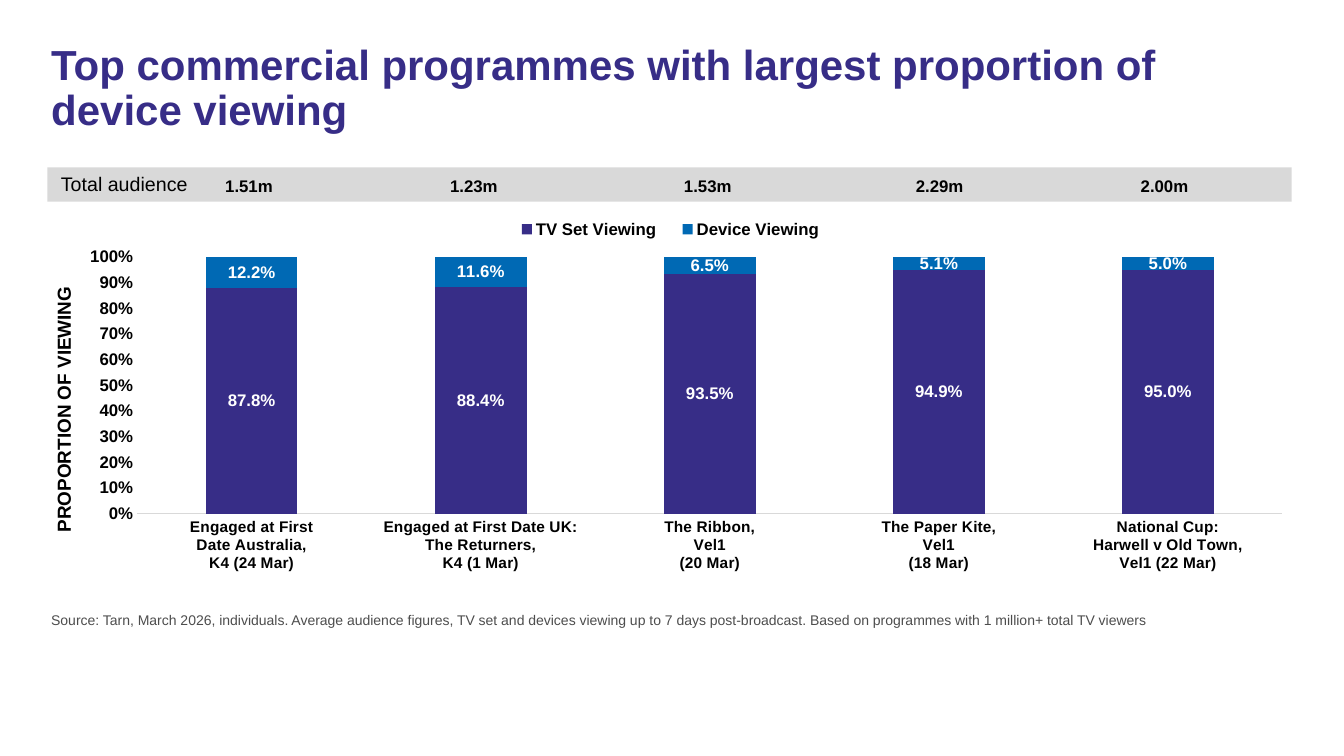
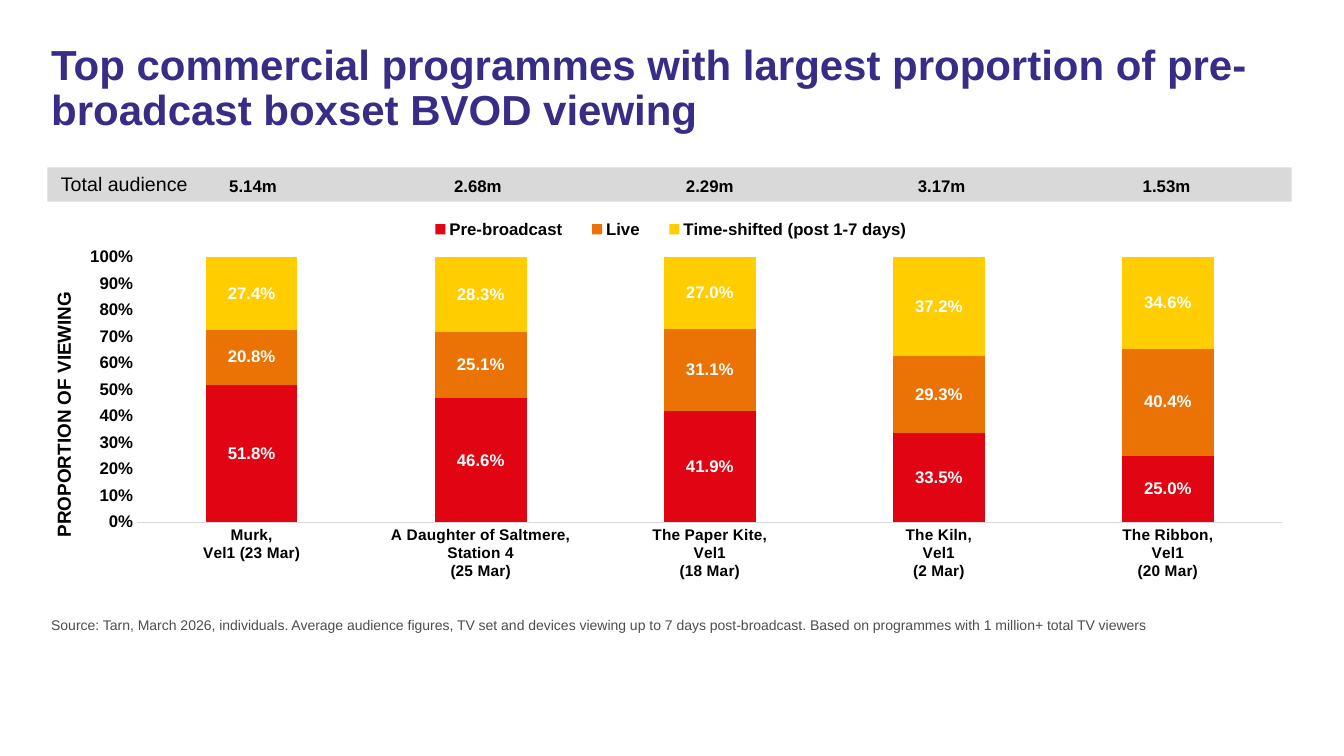
"""Build two slides on how the top commercial programmes are viewed."""
import pptx
import pptx.chart.data
import pptx.dml.color
import pptx.enum.chart
import pptx.enum.shapes
import pptx.enum.text
import pptx.oxml
import pptx.oxml.ns
import pptx.util

Inches = pptx.util.Inches
Pt = pptx.util.Pt
qn = pptx.oxml.ns.qn
ALIGN = pptx.enum.text.PP_ALIGN

FONT = "Arial"
COLOURS = {
    "purple": "372D87",
    "blue": "0069B4",
    "red": "E10514",
    "orange": "EB7305",
    "yellow": "FFCD00",
    "band": "D9D9D9",
    "source": "4D4D4D",
    "black": "000000",
    "white": "FFFFFF",
}
CHART_WIDTH, CHART_HEIGHT = 12.4, 4.8
SOURCE = (
    "Source: Tarn, March 2026, individuals. Average audience figures, TV set and "
    "devices viewing up to 7 days post-broadcast. Based on programmes with "
    "1 million+ total TV viewers"
)

DEVICE_SLIDE = {
    "title": "Top commercial programmes with largest proportion of device viewing",
    "audiences": [("1.51m", 2.47), ("1.23m", 4.7), ("1.53m", 7.02),
                  ("2.29m", 9.32), ("2.00m", 11.55)],
    "programmes": [
        "Engaged at First\nDate Australia,\nK4 (24 Mar)",
        "Engaged at First Date UK:\nThe Returners,\nK4 (1 Mar)",
        "The Ribbon,\nVel1\n(20 Mar)",
        "The Paper Kite,\nVel1\n(18 Mar)",
        "National Cup:\nHarwell v Old Town,\nVel1 (22 Mar)",
    ],
    "viewing": [
        ("TV Set Viewing", "purple", [0.878, 0.884, 0.935, 0.949, 0.95]),
        ("Device Viewing", "blue", [0.122, 0.116, 0.065, 0.051, 0.05]),
    ],
    "plot_height": 2.55,
    "axis_title_top": 1.45,
    "legend_left": 4.5,
    "legend_width": 3.36,
    "source_top": 6.02,
}
BOXSET_SLIDE = {
    "title": "Top commercial programmes with largest proportion of "
             "pre-broadcast boxset BVOD viewing",
    "audiences": [("5.14m", 2.51), ("2.68m", 4.74), ("2.29m", 7.04),
                  ("3.17m", 9.34), ("1.53m", 11.57)],
    "programmes": [
        "Murk,\nVel1 (23 Mar)",
        "A Daughter of Saltmere,\nStation 4\n(25 Mar)",
        "The Paper Kite,\nVel1\n(18 Mar)",
        "The Kiln,\nVel1\n(2 Mar)",
        "The Ribbon,\nVel1\n(20 Mar)",
    ],
    "viewing": [
        ("Pre-broadcast", "red", [0.518, 0.466, 0.419, 0.335, 0.25]),
        ("Live", "orange", [0.208, 0.251, 0.311, 0.293, 0.404]),
        ("Time-shifted (post 1-7 days)", "yellow",
         [0.274, 0.283, 0.27, 0.372, 0.346]),
    ],
    "plot_height": 2.63,
    "axis_title_top": 1.5,
    "legend_left": 3.61,
    "legend_width": 5.15,
    "source_top": 6.07,
}


def rgb(name):
    """Return the named colour."""
    return pptx.dml.color.RGBColor.from_string(COLOURS[name])


def style_font(font, size, colour="black", bold=False):
    """Apply the shared typeface with a size, colour and weight."""
    font.name = FONT
    font.size = Pt(size)
    font.bold = bold
    font.color.rgb = rgb(colour)


def add_text(slide, text, left, top, width, height, size, colour="black",
             bold=False, align=ALIGN.LEFT, spacing=None):
    """Add a wrapped one-paragraph text box."""
    box = slide.shapes.add_textbox(
        Inches(left), Inches(top), Inches(width), Inches(height))
    box.text_frame.word_wrap = True
    paragraph = box.text_frame.paragraphs[0]
    paragraph.text = text
    paragraph.alignment = align
    paragraph.line_spacing = spacing
    style_font(paragraph.font, size, colour, bold)


def add_audience_band(slide):
    """Add the grey band behind the audience totals."""
    band = slide.shapes.add_shape(
        pptx.enum.shapes.MSO_SHAPE.RECTANGLE,
        Inches(0.47), Inches(1.66), Inches(12.34), Inches(0.34))
    band.shadow.inherit = False
    band.fill.solid()
    band.fill.fore_color.rgb = rgb("band")
    band.line.fill.background()


def add_audiences(slide, audiences):
    """Label the band and centre each total above its column."""
    for total, centre in audiences:
        add_text(slide, total, centre - 0.5, 1.69, 1, 0.3, 12,
                 bold=True, align=ALIGN.CENTER)
    add_text(slide, "Total audience", 0.16, 1.66, 1.8, 0.34, 14,
             align=ALIGN.RIGHT)


def place_in_chart(part, left, top, width=None, height=None, inner=False):
    """Fix a chart part at a place given in inches from the chart corner."""
    for old in part.findall(qn("c:layout")):
        part.remove(old)
    settings = [("layoutTarget", "inner")] if inner else []
    settings += [("xMode", "edge"), ("yMode", "edge"),
                 ("x", left / CHART_WIDTH), ("y", top / CHART_HEIGHT)]
    if width:
        settings += [("w", width / CHART_WIDTH), ("h", height / CHART_HEIGHT)]
    layout = pptx.oxml.parse_xml(
        "<c:layout %s><c:manualLayout>%s</c:manualLayout></c:layout>" % (
            pptx.oxml.ns.nsdecls("c"),
            "".join(f'<c:{tag} val="{val}"/>' for tag, val in settings)))
    overlay = part.find(qn("c:overlay"))
    if overlay is None:
        part.insert(0, layout)
    else:
        overlay.addprevious(layout)


def style_axes(chart, axis_title_top):
    """Format both axes and the upright value axis title."""
    no_tick = pptx.enum.chart.XL_TICK_MARK.NONE
    programmes, share = chart.category_axis, chart.value_axis
    for axis, size in ((programmes, 11), (share, 12)):
        axis.major_tick_mark = axis.minor_tick_mark = no_tick
        axis.has_major_gridlines = False
        style_font(axis.tick_labels.font, size, bold=True)
    programmes.format.line.color.rgb = rgb("band")
    programmes.format.line.width = Pt(0.75)
    share.format.line.fill.background()
    share.minimum_scale = 0
    share.major_unit = 0.1
    share.tick_labels.number_format = "0%"
    share.tick_labels.number_format_is_linked = False
    share.has_title = True
    heading = share.axis_title.text_frame
    heading.text = "PROPORTION OF VIEWING"
    style_font(heading.paragraphs[0].font, 13.5, bold=True)
    body = heading._txBody.find(qn("a:bodyPr"))
    body.set("rot", "-5400000")
    body.set("vert", "horz")
    place_in_chart(share.axis_title._element, 0.01, axis_title_top)


def style_series(series, colour):
    """Colour one series and show its shares in white."""
    series.format.fill.solid()
    series.format.fill.fore_color.rgb = rgb(colour)
    labels = series.data_labels
    labels.show_value = True
    labels.number_format = "0.0%"
    labels.number_format_is_linked = False
    labels.position = pptx.enum.chart.XL_LABEL_POSITION.CENTER
    style_font(labels.font, 12, "white", True)


def add_viewing_chart(slide, content):
    """Add the stacked chart of viewing shares."""
    data = pptx.chart.data.CategoryChartData(number_format="0.0%")
    data.categories = content["programmes"]
    for name, _, shares in content["viewing"]:
        data.add_series(name, shares)
    chart = slide.shapes.add_chart(
        pptx.enum.chart.XL_CHART_TYPE.COLUMN_STACKED_100,
        Inches(0.47), Inches(1.36), Inches(CHART_WIDTH), Inches(CHART_HEIGHT),
        data).chart
    style_font(chart.font, 10)
    chart.has_title = False
    columns = chart.plots[0]
    columns.gap_width = 150
    columns.overlap = 100
    columns.vary_by_categories = False
    for series, (_, colour, _) in zip(columns.series, content["viewing"]):
        style_series(series, colour)
    style_axes(chart, content["axis_title_top"])
    chart.has_legend = True
    chart.legend.position = pptx.enum.chart.XL_LEGEND_POSITION.BOTTOM
    chart.legend.include_in_layout = False
    style_font(chart.legend.font, 12, bold=True)
    place_in_chart(chart.legend._element, content["legend_left"], 0.78,
                   content["legend_width"], 0.27)
    place_in_chart(chart._chartSpace.chart.plotArea, 0.89, 1.19, 11.36,
                   content["plot_height"], inner=True)


def add_viewing_slide(deck, content):
    """Add one slide with title, audience band, chart and source."""
    slide = deck.slides.add_slide(deck.slide_layouts[6])
    add_audience_band(slide)
    add_viewing_chart(slide, content)
    add_text(slide, content["title"], 0.41, 0.39, 12.4, 1.12, 30, "purple",
             bold=True, spacing=0.9)
    add_text(slide, SOURCE, 0.41, content["source_top"], 12.4, 0.3, 10, "source")
    add_audiences(slide, content["audiences"])


def main():
    """Build and save the deck."""
    deck = pptx.Presentation()
    deck.slide_width = Inches(13.33)
    deck.slide_height = Inches(7.5)
    for content in (DEVICE_SLIDE, BOXSET_SLIDE):
        add_viewing_slide(deck, content)
    deck.save("out.pptx")


if __name__ == "__main__":
    main()
